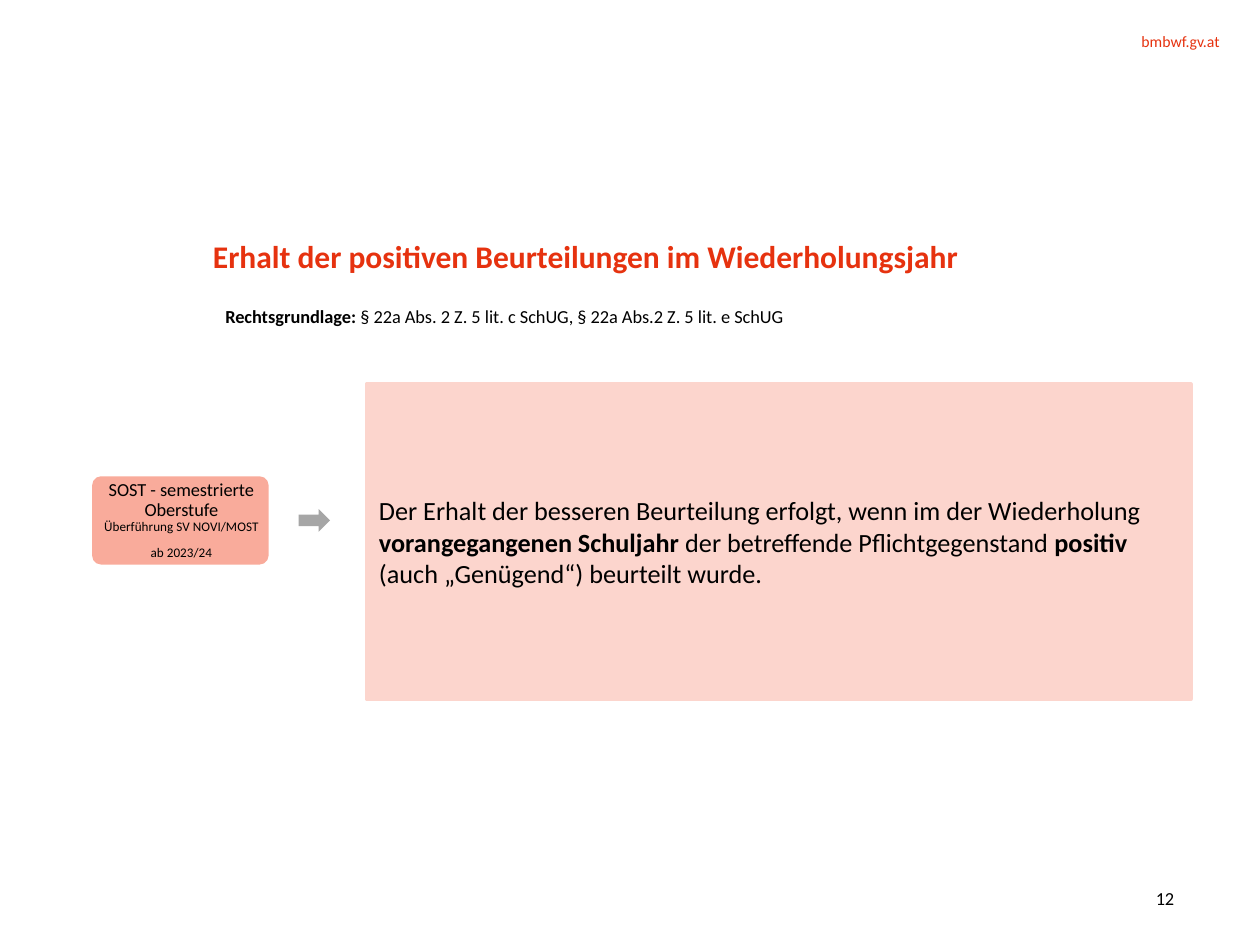
import pptx
import pptx.util
import pptx.dml.color
import pptx.enum.shapes
import pptx.enum.text
from dataclasses import dataclass

Pt = pptx.util.Pt
Form = pptx.enum.shapes.MSO_SHAPE
Align = pptx.enum.text.PP_ALIGN
Anchor = pptx.enum.text.MSO_ANCHOR


@dataclass(frozen=True)
class Theme:
    font: str = "Calibri"
    red: str = "E6320F"
    pink: str = "FCD5CD"
    rose: str = "F9AB9B"
    gray: str = "A6A6A6"
    black: str = "000000"
    title: float = 18
    body: float = 15
    label: float = 10.5
    web: float = 9
    small: float = 7.5


class Deck:
    def __init__(self, theme):
        self.theme = theme
        self.file = pptx.Presentation()
        self.file.slide_width, self.file.slide_height = Pt(720), Pt(540)
        self.slide = self.file.slides.add_slide(self.file.slide_layouts[6])

    def color(self, code):
        return pptx.dml.color.RGBColor.from_string(code)

    def shape(self, form, area, fill, line=None, host=None):
        host = host or self.slide.shapes
        item = host.add_shape(form, *map(Pt, area))
        item.shadow.inherit = False
        item.fill.solid()
        item.fill.fore_color.rgb = self.color(fill)
        if line:
            item.line.color.rgb = self.color(fill)
            item.line.width = Pt(line)
        else:
            item.line.fill.background()
        return item

    def text(self, area, inset=None, anchor=Anchor.TOP, host=None):
        host = host or self.slide.shapes
        item = host.add_textbox(*map(Pt, area))
        self.frame(item, inset, anchor)
        return item

    def frame(self, item, inset=None, anchor=Anchor.MIDDLE):
        frame = item.text_frame
        frame.word_wrap = True
        frame.vertical_anchor = anchor
        if inset is not None:
            frame.margin_left = frame.margin_right = Pt(inset)
            frame.margin_top = frame.margin_bottom = Pt(inset)

    def label(self, para, size, *parts, color=None, align=Align.LEFT):
        """Fill a paragraph; every second part is bold."""
        para.alignment = align
        para.font.name = self.theme.font
        para.font.size = Pt(size)
        para.font.color.rgb = self.color(color or self.theme.black)
        for i, part in enumerate(parts):
            if part:
                run = para.add_run()
                run.text = part
                run.font.bold = i % 2 == 1
        return para


def main():
    theme = Theme()
    deck = Deck(theme)

    # Web address and page number
    item = deck.text((523.4, 18, 173.5, 10.8), 0)
    deck.label(item.text_frame.paragraphs[0], theme.web, "bmbwf.gv.at",
               color=theme.red, align=Align.RIGHT)
    item = deck.text((607, 502.5, 64, 21), 0, Anchor.MIDDLE)
    deck.label(item.text_frame.paragraphs[0], theme.label, "12", align=Align.RIGHT)

    # Main statement
    item = deck.shape(Form.RECTANGLE, (209.5, 219.6, 471, 180), theme.pink, 2.08)
    deck.frame(item)
    deck.label(item.text_frame.paragraphs[0], theme.body,
               "Der Erhalt der besseren Beurteilung erfolgt, wenn im der Wiederholung ",
               "vorangegangenen Schuljahr ",
               "der betreffende Pflichtgegenstand",
               " positiv ",
               "(auch „Genügend“) beurteilt wurde.")

    # Arrow towards the statement
    deck.shape(Form.RIGHT_ARROW, (170.6, 290.9, 18, 13), theme.gray)

    # Legal basis
    item = deck.text((121.7, 170.6, 357.8, 20.2))
    deck.label(item.text_frame.paragraphs[0], theme.label, "", "Rechtsgrundlage: ",
               "§ 22a Abs. 2 Z. 5 lit. c SchUG, § 22a Abs.2 Z. 5 lit. e SchUG")

    # Title
    item = deck.text((121.7, 134.6, 471, 49), 0)
    para = deck.label(item.text_frame.paragraphs[0], theme.title, "",
                      "Erhalt der positiven Beurteilungen im Wiederholungsjahr",
                      color=theme.red)
    para.line_spacing = Pt(22.5)

    # School type: rounded card with its label
    card = deck.slide.shapes.add_group_shape().shapes
    item = deck.shape(Form.ROUNDED_RECTANGLE, (52.7, 272.2, 100.8, 50.4),
                      theme.rose, host=card)
    item.adjustments[0] = 0.1
    item = deck.text((54.7, 273.6, 97.9, 47.5), 0.7, Anchor.MIDDLE, card)
    frame = item.text_frame
    head = deck.label(frame.paragraphs[0], theme.label,
                      "SOST - semestrierte Oberstufe", align=Align.CENTER)
    head.add_line_break()
    run = head.add_run()
    run.text = "Überführung SV NOVI/MOST"
    run.font.size = Pt(theme.small)
    head.space_after = Pt(6.5)
    foot = deck.label(frame.add_paragraph(), theme.small, "ab 2023/24",
                      align=Align.CENTER)
    head.line_spacing = foot.line_spacing = 0.9

    deck.file.save("out.pptx")


if __name__ == "__main__":
    main()
